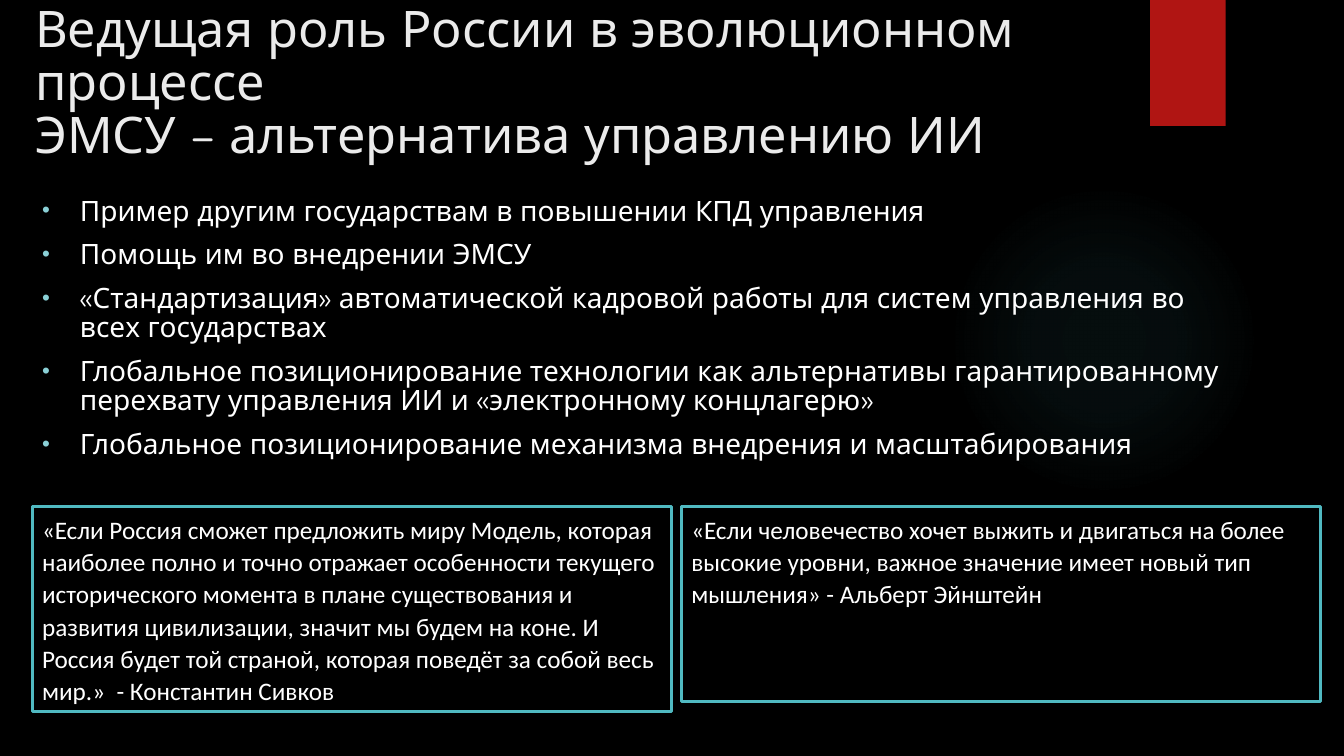
from lxml import etree
from pptx import Presentation
from pptx.dml.color import RGBColor
from pptx.enum.shapes import MSO_SHAPE
from pptx.enum.text import MSO_ANCHOR, PP_ALIGN
from pptx.oxml import parse_xml
from pptx.oxml.ns import nsdecls, qn
from pptx.util import Pt

RECTANGLE, OVAL = MSO_SHAPE.RECTANGLE, MSO_SHAPE.OVAL
TOP, LEFT = MSO_ANCHOR.TOP, PP_ALIGN.LEFT

COLORS = {
    "background": "000000",
    "title": "EBEBEB",
    "text": "FFFFFF",
    "teal": "50B9C1",
    "bullet": "8AD0D6",
    "red": "B01513",
}
HEADING_FONT, QUOTE_FONT = "Quicksand", "Calibri"

TITLE = "Ведущая роль России в эволюционном процессе\vЭМСУ – альтернатива управлению ИИ"
THESES = [
    "Пример другим государствам в повышении КПД управления",
    "Помощь им во внедрении ЭМСУ",
    "«Стандартизация» автоматической кадровой работы для систем управления во всех государствах",
    "Глобальное позиционирование технологии как альтернативы гарантированному "
    "перехвату управления ИИ и «электронному концлагерю»",
    "Глобальное позиционирование механизма внедрения и масштабирования",
]
QUOTES = [
    ("«Если Россия сможет предложить миру Модель, которая наиболее полно и точно отражает "
     "особенности текущего исторического момента в плане существования и развития цивилизации, "
     "значит мы будем на коне. И Россия будет той страной, которая поведёт за собой весь мир.»"
     "  - Константин Сивков", 146),
    ("«Если человечество хочет выжить и двигаться на более высокие уровни, важное значение "
     "имеет новый тип мышления» - Альберт Эйнштейн", 139),
]


def rgb(name):
    return RGBColor.from_string(COLORS[name])


class SlideBuilder:
    def __init__(self, slide):
        self.slide = slide
        slide.background.fill.solid()
        slide.background.fill.fore_color.rgb = rgb("background")

    def shape(self, preset, left, top, width, height):
        shape = self.slide.shapes.add_shape(preset, Pt(left), Pt(top), Pt(width), Pt(height))
        shape.shadow.inherit = False
        shape.line.fill.background()
        shape.fill.background()
        return shape

    def glow(self, left, top, size, stops):
        """Circle that fades outwards; stops are (position, opacity) in percent."""
        circle = self.shape(OVAL, left, top, size, size)
        stop_xml = "".join(
            f'<a:gs pos="{position * 1000}"><a:srgbClr val="{COLORS["teal"]}">'
            f'<a:alpha val="{opacity * 1000}"/></a:srgbClr></a:gs>'
            for position, opacity in stops)
        gradient = parse_xml(
            f'<a:gradFill {nsdecls("a")} rotWithShape="1"><a:gsLst>{stop_xml}</a:gsLst>'
            '<a:path path="circle"><a:fillToRect l="50000" t="50000" r="50000" b="50000"/>'
            '</a:path></a:gradFill>')
        properties = circle._element.spPr
        properties.replace(properties.find(qn("a:noFill")), gradient)

    def ribbon(self, left, top, width, height):
        ribbon = self.shape(RECTANGLE, left, top, width, height)
        ribbon.fill.solid()
        ribbon.fill.fore_color.rgb = rgb("red")
        effects = ribbon._element.spPr.find(qn("a:effectLst"))
        effects.append(parse_xml(
            f'<a:outerShdw {nsdecls("a")} blurRad="{Pt(3)}" dist="{Pt(2)}" dir="5400000" '
            'rotWithShape="0"><a:srgbClr val="000000"><a:alpha val="45000"/></a:srgbClr>'
            '</a:outerShdw>'))

    def text_box(self, left, top, width, height):
        box = self.slide.shapes.add_textbox(Pt(left), Pt(top), Pt(width), Pt(height))
        box.text_frame.word_wrap = True
        return box.text_frame

    def style(self, paragraph, font, size, color):
        paragraph.alignment = LEFT
        for run in paragraph.runs:
            run.font.name = font
            run.font.size = Pt(size)
            run.font.color.rgb = rgb(color)

    def title(self, text, *place):
        frame = self.text_box(*place)
        frame.text = text
        self.style(frame.paragraphs[0], HEADING_FONT, 36, "title")
        frame.paragraphs[0].line_spacing = 0.88

    def bullets(self, items, *place):
        frame = self.text_box(*place)
        for index, item in enumerate(items):
            paragraph = frame.paragraphs[0] if index == 0 else frame.add_paragraph()
            paragraph.text = item
            self.add_bullet(paragraph)
            self.style(paragraph, HEADING_FONT, 20, "text")
            paragraph.line_spacing = 0.88
            if index:
                paragraph.space_before = Pt(10)

    def add_bullet(self, paragraph):
        properties = paragraph._p.get_or_add_pPr()
        properties.set("marL", str(Pt(27)))
        properties.set("indent", str(Pt(-27)))
        color = etree.SubElement(properties, qn("a:buClr"))
        etree.SubElement(color, qn("a:srgbClr"), val=COLORS["bullet"])
        etree.SubElement(properties, qn("a:buSzPct"), val="80000")
        etree.SubElement(properties, qn("a:buFont"), typeface="Arial")
        etree.SubElement(properties, qn("a:buChar"), char="•")

    def quote(self, text, *place):
        frame_shape = self.shape(RECTANGLE, *place)
        frame_shape.line.color.rgb = rgb("teal")
        frame_shape.line.width = Pt(2.25)
        frame = frame_shape.text_frame
        frame.word_wrap = True
        frame.vertical_anchor = TOP
        frame.text = text
        paragraph = frame.paragraphs[0]
        self.style(paragraph, QUOTE_FONT, 18, "text")
        paragraph.line_spacing = 1.07
        paragraph.space_after = Pt(8)


def main():
    presentation = Presentation()
    presentation.slide_width, presentation.slide_height = Pt(960), Pt(540)
    builder = SlideBuilder(presentation.slides.add_slide(presentation.slide_layouts[6]))

    builder.glow(677.5, 131.8, 221.8, [(0, 7), (36, 6), (69, 0)])
    builder.ribbon(821.5, 0, 54, 90)
    builder.title(TITLE, 18, 0, 874, 161)
    builder.bullets(THESES, 23, 137.5, 868, 224.6)
    for column, (text, height) in enumerate(QUOTES):
        builder.quote(text, 23 + column * 463.7, 362, 456.5, height)
    presentation.save("out.pptx")


if __name__ == "__main__":
    main()
